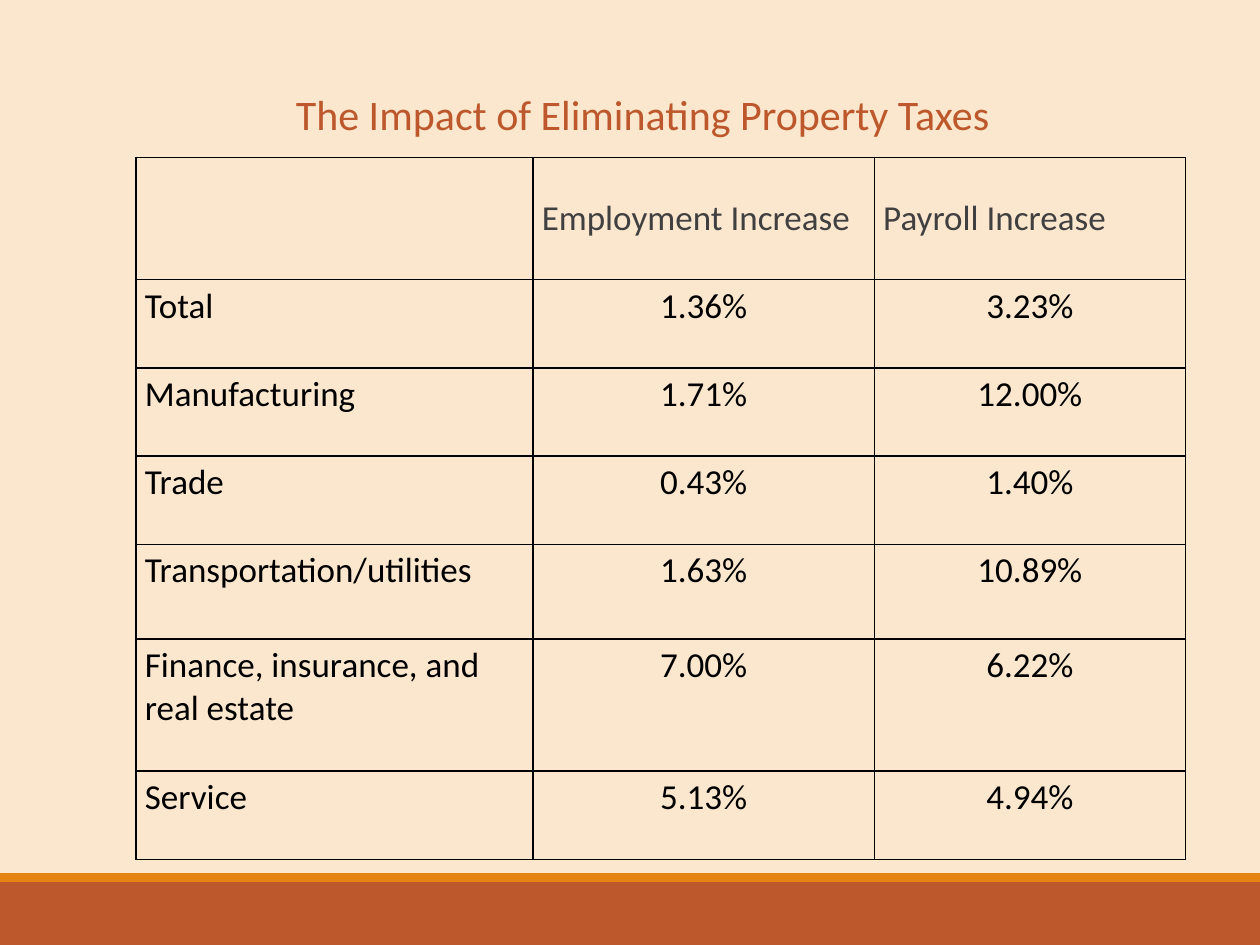
from dataclasses import dataclass

from lxml import etree
from pptx import Presentation
from pptx.dml.color import RGBColor
from pptx.enum.shapes import MSO_SHAPE
from pptx.enum.text import MSO_ANCHOR, PP_ALIGN
from pptx.oxml.ns import qn
from pptx.util import Inches, Pt

RECT = MSO_SHAPE.RECTANGLE
TOP, MIDDLE = MSO_ANCHOR.TOP, MSO_ANCHOR.MIDDLE
LEFT, CENTER = PP_ALIGN.LEFT, PP_ALIGN.CENTER


@dataclass(frozen=True)
class Theme:
    font: str = "Calibri"
    back: str = "FBE6CE"
    rust: str = "BD582C"
    amber: str = "E48312"
    gray: str = "404040"
    black: str = "000000"
    title: int = 24
    body: int = 20
    rule: int = 1


THEME = Theme()
COLS = [3.15, 2.71, 2.47]
HEIGHTS = [0.97, 0.7, 0.7, 0.7, 0.75, 1.05, 0.7]
ROWS = [
    ["", "Employment Increase", "Payroll Increase"],
    ["Total", "1.36%", "3.23%"],
    ["Manufacturing", "1.71%", "12.00%"],
    ["Trade", "0.43%", "1.40%"],
    ["Transportation/utilities", "1.63%", "10.89%"],
    ["Finance, insurance, and real estate", "7.00%", "6.22%"],
    ["Service", "5.13%", "4.94%"],
]


def color(code):
    return RGBColor.from_string(code)


def add_run(para, text, size, code):
    run = para.add_run()
    run.text = text
    run.font.name = THEME.font
    run.font.size = Pt(size)
    run.font.color.rgb = color(code)


def add_band(slide, top, height, code):
    """Draw a bar across the full slide width."""
    band = slide.shapes.add_shape(
        RECT, 0, Inches(top), Inches(10), Inches(height))
    band.shadow.inherit = False
    band.fill.solid()
    band.fill.fore_color.rgb = color(code)
    band.line.fill.background()


def add_title(slide, text):
    box = slide.shapes.add_textbox(
        Inches(2.25), Inches(0.65), Inches(6), Inches(0.5))
    box.text_frame.word_wrap = True
    add_run(box.text_frame.paragraphs[0], text, THEME.title, THEME.rust)


def add_edges(cell):
    props = cell._tc.get_or_add_tcPr()
    for side in ("lnL", "lnR", "lnT", "lnB"):
        edge = etree.SubElement(
            props, qn(f"a:{side}"), w=str(Pt(THEME.rule)))
        fill = etree.SubElement(edge, qn("a:solidFill"))
        etree.SubElement(fill, qn("a:srgbClr"), val=THEME.black)


def fill_cell(cell, text, head, align):
    add_edges(cell)
    cell.fill.background()
    cell.margin_left = cell.margin_right = Inches(0.07)
    cell.margin_top = cell.margin_bottom = Inches(0.04)
    cell.vertical_anchor = MIDDLE if head else TOP
    para = cell.text_frame.paragraphs[0]
    para.alignment = align
    if text:
        add_run(para, text, THEME.body, THEME.gray if head else THEME.black)


def add_grid(slide):
    frame = slide.shapes.add_table(
        len(ROWS), len(COLS), Inches(1.08), Inches(1.25),
        Inches(sum(COLS)), Inches(sum(HEIGHTS)))
    table = frame.table
    table.first_row = table.horz_banding = False
    for col, width in zip(table.columns, COLS):
        col.width = Inches(width)
    for row, height in zip(table.rows, HEIGHTS):
        row.height = Inches(height)
    for r, texts in enumerate(ROWS):
        for c, text in enumerate(texts):
            align = CENTER if r and c else LEFT
            fill_cell(table.cell(r, c), text, r == 0, align)


def main():
    deck = Presentation()
    deck.slide_width, deck.slide_height = Inches(10), Inches(7.5)
    slide = deck.slides.add_slide(deck.slide_layouts[6])
    slide.background.fill.solid()
    slide.background.fill.fore_color.rgb = color(THEME.back)
    add_band(slide, 7, 0.5, THEME.rust)
    add_band(slide, 6.93, 0.07, THEME.amber)
    add_grid(slide)
    add_title(slide, "The Impact of Eliminating Property Taxes")
    deck.save("out.pptx")


if __name__ == "__main__":
    main()
